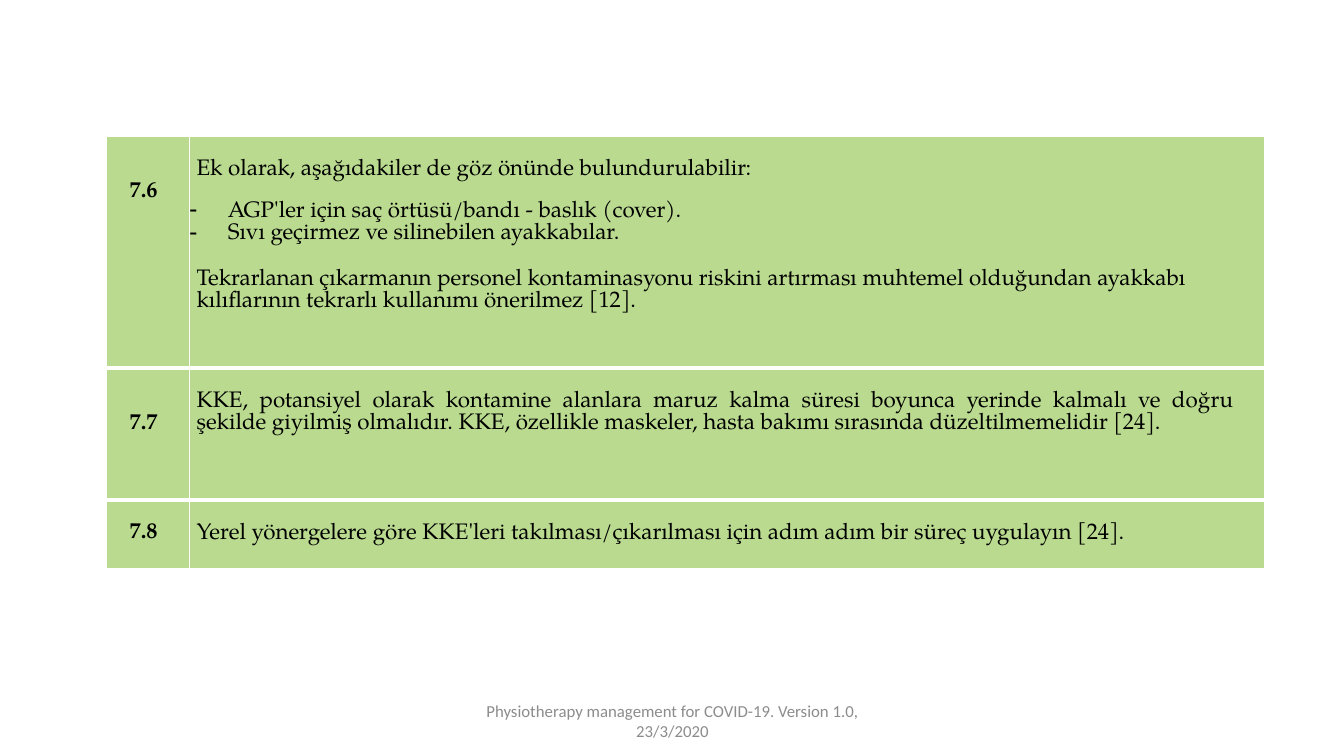
from dataclasses import dataclass

from lxml.etree import SubElement
from pptx import Presentation
from pptx.dml.color import RGBColor
from pptx.enum.text import MSO_ANCHOR, PP_ALIGN
from pptx.oxml.ns import qn
from pptx.util import Emu, Inches, Pt

COLORS = {"green": "B9DA8F", "white": "FFFFFF", "black": "000000", "grey": "8C8C8C"}
SLIDE_COLUMNS, SLIDE_ROWS = 133.3, 75
GRID_STEP = Inches(0.1)
LINE_STEP = 2.26
LINE_GAP = 16.3


def grid(steps: float) -> Emu:
    return Emu(round(steps * GRID_STEP))


@dataclass(frozen=True)
class Passage:
    text: str
    gap: float = 0
    bullet: bool = False
    leading: float | None = None


@dataclass(frozen=True)
class Recommendation:
    number: str
    passages: tuple[Passage, ...]
    height: float
    number_lines: int
    align: PP_ALIGN = PP_ALIGN.LEFT


RECOMMENDATIONS = (
    Recommendation("7.6", (
        Passage("Ek olarak, aşağıdakiler de göz önünde bulundurulabilir:"),
        Passage("AGP'ler için saç örtüsü/bandı - baslık (cover).", LINE_GAP, True, 13.8),
        Passage("Sıvı geçirmez ve silinebilen ayakkabılar.", bullet=True),
        Passage("Tekrarlanan çıkarmanın personel kontaminasyonu riskini artırması muhtemel "
                "olduğundan ayakkabı kılıflarının tekrarlı kullanımı önerilmez [12].", LINE_GAP),
    ), 23, 2),
    Recommendation("7.7", (
        Passage("KKE, potansiyel olarak kontamine alanlara maruz kalma süresi boyunca yerinde "
                "kalmalı ve doğru şekilde giyilmiş olmalıdır. KKE, özellikle maskeler, hasta "
                "bakımı sırasında düzeltilmemelidir [24]."),
    ), 13.1, 2, PP_ALIGN.JUSTIFY),
    Recommendation("7.8", (
        Passage("Yerel yönergelere göre KKE'leri takılması/çıkarılması için adım adım bir süreç "
                "uygulayın [24]."),
    ), 6.8, 1),
)


def set_font(paragraph, face: str, size: float, color: str, bold: bool = False) -> None:
    font = paragraph.font
    font.name, font.size, font.bold = face, Pt(size), bold
    font.color.rgb = RGBColor.from_string(COLORS[color])


def set_indent(paragraph, left: float, first: float = 0) -> None:
    properties = paragraph._p.get_or_add_pPr()
    properties.set("marL", str(grid(left)))
    properties.set("indent", str(grid(first)))


def style_cell(cell, lines_above: int, right: float, top_rule: int, bottom_rule: int) -> None:
    cell.margin_left = cell.margin_bottom = 0
    cell.margin_right = grid(right)
    cell.margin_top = grid(lines_above * LINE_STEP)
    properties = cell._tc.get_or_add_tcPr()
    for side, width in (("lnL", 1), ("lnR", 1), ("lnT", top_rule), ("lnB", bottom_rule)):
        rule = SubElement(properties, qn(f"a:{side}"), w=str(Pt(width)))
        SubElement(SubElement(rule, qn("a:solidFill")), qn("a:srgbClr"), val=COLORS["white"])
    cell.fill.solid()
    cell.fill.fore_color.rgb = RGBColor.from_string(COLORS["green"])


def write_number(cell, number: str) -> None:
    paragraph = cell.text_frame.paragraphs[0]
    paragraph.text = number
    paragraph.alignment = PP_ALIGN.CENTER
    set_indent(paragraph, 0.6)
    set_font(paragraph, "TeX Gyre Pagella", 16, "black", True)


def write_passages(cell, recommendation: Recommendation) -> None:
    frame = cell.text_frame
    for index, passage in enumerate(recommendation.passages):
        paragraph = frame.add_paragraph() if index else frame.paragraphs[0]
        paragraph.text = passage.text
        paragraph.alignment = recommendation.align
        if passage.gap:
            paragraph.space_before = Pt(passage.gap)
        if passage.leading:
            paragraph.line_spacing = Pt(passage.leading)
        if passage.bullet:
            set_indent(paragraph, 3.8, -3.8)
            SubElement(paragraph._p.get_or_add_pPr(), qn("a:buChar"), char="-")
        else:
            set_indent(paragraph, 0.7)
        set_font(paragraph, "TeX Gyre Pagella", 16, "black")


def add_recommendations(slide) -> None:
    widths = (8.2, 106.6)
    table = slide.shapes.add_table(
        len(RECOMMENDATIONS), len(widths), grid(10.6), grid(13.5), grid(sum(widths)),
        grid(sum(item.height for item in RECOMMENDATIONS))).table
    table.first_row = table.horz_banding = False
    for column, width in zip(table.columns, widths):
        column.width = grid(width)
    last = len(RECOMMENDATIONS) - 1
    for index, item in enumerate(RECOMMENDATIONS):
        table.rows[index].height = grid(item.height)
        rules = (3 if index else 1, 3 if index < last else 1)
        number_cell, text_cell = table.cell(index, 0), table.cell(index, 1)
        style_cell(number_cell, item.number_lines, 1.5, *rules)
        style_cell(text_cell, 1, 3, *rules)
        write_number(number_cell, item.number)
        write_passages(text_cell, item)


def add_footer(slide) -> None:
    footer = slide.shapes.add_textbox(grid(44.2), grid(69.5), grid(45), grid(4)).text_frame
    footer.word_wrap = True
    footer.vertical_anchor = MSO_ANCHOR.MIDDLE
    paragraph = footer.paragraphs[0]
    paragraph.text = "Physiotherapy management for COVID-19. Version 1.0, 23/3/2020"
    paragraph.alignment = PP_ALIGN.CENTER
    set_font(paragraph, "Calibri", 12, "grey")


def main() -> None:
    presentation = Presentation()
    presentation.slide_width = grid(SLIDE_COLUMNS)
    presentation.slide_height = grid(SLIDE_ROWS)
    slide = presentation.slides.add_slide(presentation.slide_layouts[6])
    add_recommendations(slide)
    add_footer(slide)
    presentation.save("out.pptx")


if __name__ == "__main__":
    main()
